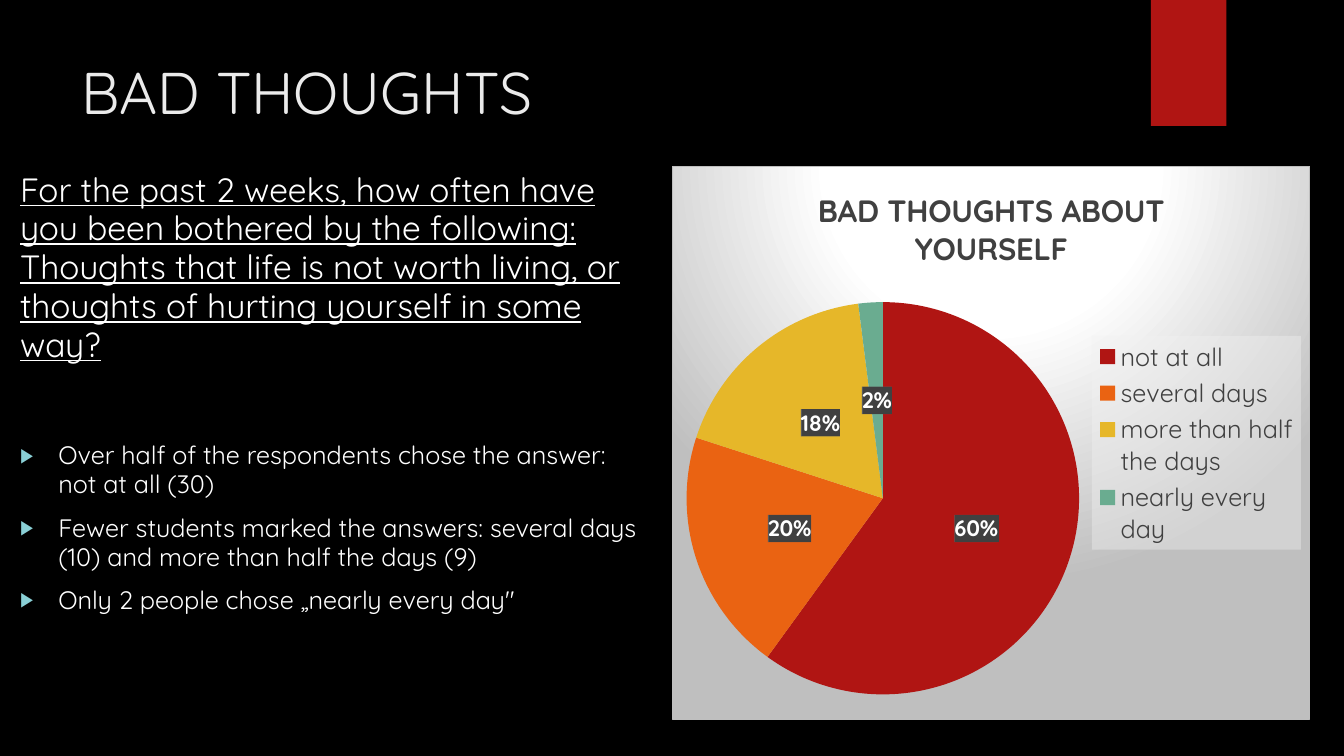
import pptx
import pptx.util
import pptx.chart.data
import pptx.dml.color
import pptx.enum.chart
import pptx.enum.shapes
import pptx.oxml
import pptx.oxml.ns

FONT = "Quicksand"
COLS, ROWS = 160, 90  # square grid cells over the whole slide
COLORS = {
    "black": "000000", "white": "FFFFFF", "title": "EBEBEB", "bullet": "8AD0D6",
    "red": "B01513", "orange": "EA6312", "yellow": "E6B729", "green": "6AAC90",
    "dark": "404040", "mid": "595959", "silver": "BFBFBF", "pale": "F2F2F2",
}
QUESTION = ("For the past 2 weeks, how often have you been bothered by the following: "
            "Thoughts that life is not worth living, or thoughts of hurting yourself "
            "in some way?")
FINDINGS = [
    "Over half of the respondents chose the answer: not at all (30)",
    "Fewer students marked the answers: several days (10) and more than half the days (9)",
    "Only 2 people chose „nearly every day\"",
]
ANSWERS = [("not at all", 60, "red"), ("several days", 20, "orange"),
           ("more than half the days", 18, "yellow"), ("nearly every day", 2, "green")]
CHART_TITLE = "BAD THOUGHTS ABOUT YOURSELF"


def rgb(name):
    return pptx.dml.color.RGBColor.from_string(COLORS[name])


def grid(prs, col, row, cols, rows):
    cell_w, cell_h = prs.slide_width / COLS, prs.slide_height / ROWS
    return [round(v) for v in (col * cell_w, row * cell_h, cols * cell_w, rows * cell_h)]


def xml(tag, body):
    return pptx.oxml.parse_xml(
        f'<{tag} {pptx.oxml.ns.nsdecls("a", "c")}>{body}</{tag}>')


def clr(name, extra=""):
    return f'<a:srgbClr val="{COLORS[name]}">{extra}</a:srgbClr>'


def style(font, size, color, bold=False):
    font.name, font.size, font.bold = FONT, pptx.util.Pt(size), bold
    font.color.rgb = rgb(color)


def add_bullet(p):
    pPr = p._p.get_or_add_pPr()
    indent = pptx.util.Inches(0.38)
    pPr.set("marL", str(indent))
    pPr.set("indent", str(-indent))
    pPr.append(xml("a:buClr", clr("bullet")))
    for tag, key, value in (("a:buSzPct", "val", "80000"),
                            ("a:buFont", "typeface", "Arial"),
                            ("a:buChar", "char", "▶")):
        el = xml(tag, "")
        el.set(key, value)
        pPr.append(el)


def add_text(s, box, lines, size, color, spacing=1.0, underline=False, bullets=False):
    tf = s.shapes.add_textbox(*box).text_frame
    tf.word_wrap = True
    for i, line in enumerate(lines):
        p = tf.paragraphs[0] if i == 0 else tf.add_paragraph()
        p.line_spacing = spacing
        if i:
            p.space_before = pptx.util.Pt(10)
        if bullets:
            add_bullet(p)
        r = p.add_run()
        r.text = line
        style(r.font, size, color)
        r.font.underline = underline


def add_block(s, box, color):
    sp = s.shapes.add_shape(pptx.enum.shapes.MSO_SHAPE.RECTANGLE, *box)
    sp.shadow.inherit = False
    sp.fill.solid()
    sp.fill.fore_color.rgb = rgb(color)
    sp.line.fill.background()


def layout(x, y, w, h, inner=False):
    target = '<c:layoutTarget val="inner"/>' if inner else ""
    modes = '<c:xMode val="edge"/><c:yMode val="edge"/>'
    sizes = "".join(f'<c:{k} val="{v}"/>' for k, v in zip("xywh", (x, y, w, h)))
    return xml("c:layout", f"<c:manualLayout>{target}{modes}{sizes}</c:manualLayout>")


def chart_background():
    stops = "".join(f'<a:gs pos="{pos * 1000}">{clr(name)}</a:gs>'
                    for pos, name in ((0, "white"), (39, "white"), (100, "silver")))
    return xml("c:spPr", f'<a:gradFill><a:gsLst>{stops}</a:gsLst><a:path path="circle">'
               '<a:fillToRect l="50000" t="-80000" r="50000" b="180000"/></a:path>'
               f'</a:gradFill><a:ln w="9525"><a:solidFill>{clr("silver")}</a:solidFill></a:ln>')


def add_pie(s, box):
    data = pptx.chart.data.CategoryChartData()
    data.categories = [name for name, _, _ in ANSWERS]
    data.add_series(CHART_TITLE, [value for _, value, _ in ANSWERS])
    chart = s.shapes.add_chart(pptx.enum.chart.XL_CHART_TYPE.PIE, *box, data).chart
    style(chart.font, 10, "white")
    chart._chartSpace.chart.addnext(chart_background())

    # Title
    r = chart.chart_title.text_frame.paragraphs[0].add_run()
    r.text = CHART_TITLE
    style(r.font, 22, "dark", bold=True)
    chart.chart_title.include_in_layout = False

    # Slices
    plot = chart.plots[0]
    plot.vary_by_categories = True
    series = plot.series[0]
    for i, (_, _, color) in enumerate(ANSWERS):
        fill = series.points[i].format.fill
        fill.solid()
        fill.fore_color.rgb = rgb(color)
    area = chart._chartSpace.chart.plotArea
    for old in area.findall(pptx.oxml.ns.qn("c:layout")):
        area.remove(old)
    area.insert(0, layout(0.022, 0.245, 0.616, 0.71, inner=True))

    # Percent labels on a striped dark ground
    labels = series.data_labels
    labels.show_value, labels.show_percentage = False, True
    labels.number_format, labels.number_format_is_linked = "0%", False
    labels.position = pptx.enum.chart.XL_LABEL_POSITION.CENTER
    style(labels.font, 16, "white", bold=True)
    labels._element.find(pptx.oxml.ns.qn("c:txPr")).addprevious(xml(
        "c:spPr", f'<a:pattFill prst="dkVert"><a:fgClr>{clr("dark")}</a:fgClr>'
        f'<a:bgClr>{clr("mid")}</a:bgClr></a:pattFill>'))

    # Legend on a translucent panel
    chart.has_legend = True
    legend = chart.legend
    legend.position = pptx.enum.chart.XL_LEGEND_POSITION.RIGHT
    legend.include_in_layout = False
    style(legend.font, 18, "dark")
    el = legend._element
    el.find(pptx.oxml.ns.qn("c:legendPos")).addnext(layout(0.658, 0.306, 0.328, 0.387))
    panel = clr("pale", '<a:alpha val="39000"/>')
    el.find(pptx.oxml.ns.qn("c:txPr")).addprevious(
        xml("c:spPr", f"<a:solidFill>{panel}</a:solidFill>"))


def main():
    prs = pptx.Presentation()
    prs.slide_width, prs.slide_height = pptx.util.Inches(13.33), pptx.util.Inches(7.5)
    s = prs.slides.add_slide(prs.slide_layouts[6])
    s.background.fill.solid()
    s.background.fill.fore_color.rgb = rgb("black")

    # Corner block and heading
    add_block(s, grid(prs, 137, 0, 9, 15), "red")
    add_text(s, grid(prs, 8.5, 6, 123.5, 12), ["BAD THOUGHTS"], 42, "title")

    # Question and findings
    add_text(s, grid(prs, 1.2, 19.8, 76, 26), [QUESTION], 24, "white", 0.96, underline=True)
    add_text(s, grid(prs, 1.2, 52, 76, 30), FINDINGS, 18, "white", 0.96, bullets=True)

    # Answers
    add_pie(s, grid(prs, 80, 19.8, 76, 65.9))
    prs.save("out.pptx")


if __name__ == "__main__":
    main()
